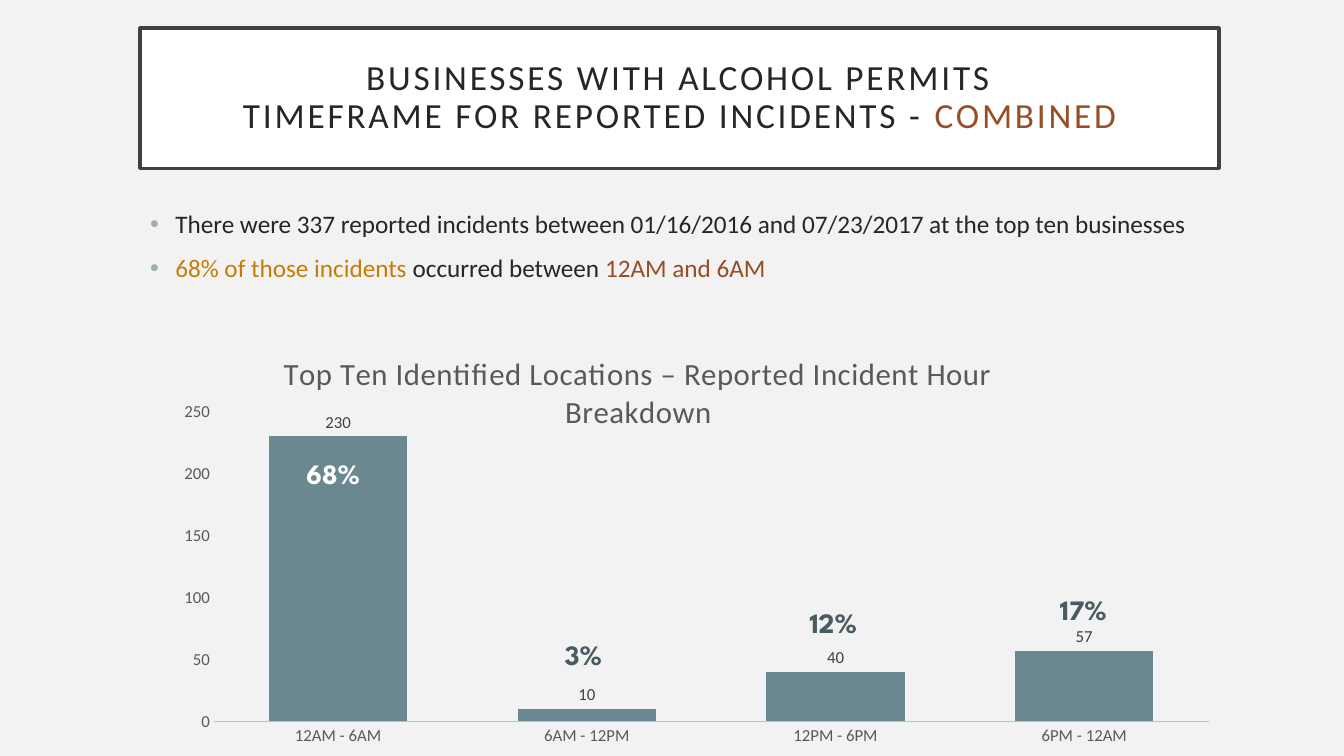
from dataclasses import dataclass

from lxml import etree
from pptx import Presentation
from pptx.chart.data import CategoryChartData
from pptx.dml.color import RGBColor
from pptx.enum.chart import XL_CHART_TYPE, XL_LABEL_POSITION, XL_TICK_MARK
from pptx.enum.shapes import MSO_SHAPE
from pptx.enum.text import MSO_ANCHOR, PP_ALIGN
from pptx.oxml import parse_xml
from pptx.oxml.ns import nsdecls, qn
from pptx.util import Inches, Pt

CENTER = PP_ALIGN.CENTER
MIDDLE = MSO_ANCHOR.MIDDLE
RECTANGLE = MSO_SHAPE.RECTANGLE
COLUMNS = XL_CHART_TYPE.COLUMN_CLUSTERED
OUTSIDE_END = XL_LABEL_POSITION.OUTSIDE_END
NO_TICK = XL_TICK_MARK.NONE

PAPER = RGBColor(0xF2, 0xF2, 0xF2)
WHITE = RGBColor(0xFF, 0xFF, 0xFF)
INK = RGBColor(0x26, 0x26, 0x26)
CHARCOAL = RGBColor(0x40, 0x40, 0x40)
GRAY = RGBColor(0x59, 0x59, 0x59)
AXIS_GRAY = RGBColor(0xBF, 0xBF, 0xBF)
RUST = RGBColor(0x97, 0x4D, 0x25)
AMBER = RGBColor(0xC6, 0x7D, 0x08)
TEAL = RGBColor(0x6B, 0x88, 0x91)
DARK_TEAL = RGBColor(0x47, 0x5B, 0x61)
BULLET = RGBColor(0x9B, 0xAF, 0xB5)

BODY_FONT = "Calibri"
SHARE_FONT = "League Spartan"


@dataclass
class Span:
    text: str
    color: RGBColor


@dataclass
class Period:
    hours: str
    incidents: int
    share: str
    share_top: float
    share_color: RGBColor


TITLE_LINES = [
    [Span("BUSINESSES WITH ALCOHOL PERMITS", INK)],
    [Span("TIMEFRAME FOR REPORTED INCIDENTS - ", INK), Span("COMBINED", RUST)],
]
FINDINGS = [
    [Span("There were 337 reported incidents between 01/16/2016 and 07/23/2017 "
          "at the top ten businesses", INK)],
    [Span("68% of those incidents ", AMBER), Span("occurred between ", INK),
     Span("12AM and 6AM", RUST)],
]
PERIODS = [
    Period("12AM - 6AM", 230, "68%", 4.43, WHITE),
    Period("6AM - 12PM", 10, "3%", 6.22, DARK_TEAL),
    Period("12PM - 6PM", 40, "12%", 5.91, DARK_TEAL),
    Period("6PM - 12AM", 57, "17%", 5.78, DARK_TEAL),
]
SHARE_LEFT = 2.55
SHARE_STEP = 2.48


def style_font(font, size: float, color: RGBColor, name: str = BODY_FONT,
               bold: bool = False) -> None:
    font.size = Pt(size)
    font.name = name
    font.bold = bold
    font.color.rgb = color


def add_span(para, span: Span, size: float, name: str = BODY_FONT,
             bold: bool = False, spacing: float = 0) -> None:
    run = para.add_run()
    run.text = span.text
    style_font(run.font, size, span.color, name, bold)
    if spacing:
        run.font._element.set("spc", str(int(spacing * 100)))


def add_bullet(para) -> None:
    properties = para._p.get_or_add_pPr()
    properties.set("marL", str(Inches(0.25)))
    properties.set("indent", str(-Inches(0.25)))
    color = etree.SubElement(properties, qn("a:buClr"))
    etree.SubElement(color, qn("a:srgbClr"), val=str(BULLET))
    etree.SubElement(properties, qn("a:buFont"), typeface="Arial")
    etree.SubElement(properties, qn("a:buChar"), char="•")


def add_title(page) -> None:
    box = page.shapes.add_shape(RECTANGLE, Inches(1.39), Inches(0.28),
                                Inches(10.7), Inches(1.39))
    box.shadow.inherit = False
    box.fill.solid()
    box.fill.fore_color.rgb = WHITE
    box.line.color.rgb = CHARCOAL
    box.line.width = Pt(2.5)
    frame = box.text_frame
    frame.word_wrap = True
    frame.vertical_anchor = MIDDLE
    frame.margin_left = frame.margin_right = Inches(0.2)
    frame.margin_top = frame.margin_bottom = Inches(0.2)
    para = frame.paragraphs[0]
    para.alignment = CENTER
    para.line_spacing = 0.9
    for index, line in enumerate(TITLE_LINES):
        if index:
            para.add_line_break()
        for span in line:
            add_span(para, span, 25.2, spacing=2)


def add_findings(page) -> None:
    box = page.shapes.add_textbox(Inches(1.39), Inches(2.02), Inches(10.82), Inches(3.67))
    frame = box.text_frame
    frame.word_wrap = True
    for index, finding in enumerate(FINDINGS):
        para = frame.add_paragraph() if index else frame.paragraphs[0]
        para.space_before = Pt(10)
        add_bullet(para)
        for span in finding:
            add_span(para, span, 18)


def make_layout(x: float, y: float, size: tuple[float, float] | None = None):
    target = '<c:layoutTarget val="inner"/>' if size else ""
    extent = f'<c:w val="{size[0]}"/><c:h val="{size[1]}"/>' if size else ""
    return parse_xml(
        f'<c:layout {nsdecls("c")}><c:manualLayout>{target}'
        f'<c:xMode val="edge"/><c:yMode val="edge"/>'
        f'<c:x val="{x}"/><c:y val="{y}"/>{extent}</c:manualLayout></c:layout>')


def place_part(part, layout) -> None:
    for previous in part.findall(qn("c:layout")):
        part.remove(previous)
    text = part.find(qn("c:tx"))
    if text is None:
        part.insert(0, layout)
    else:
        text.addnext(layout)


def add_incident_chart(page) -> None:
    data = CategoryChartData()
    data.categories = [period.hours for period in PERIODS]
    data.add_series("Series 1", [period.incidents for period in PERIODS])
    chart = page.shapes.add_chart(COLUMNS, Inches(1.59), Inches(3.23),
                                  Inches(10.61), Inches(4.27), data).chart
    chart.has_legend = False
    style_font(chart.font, 10, GRAY)
    chart.has_title = True
    add_span(chart.chart_title.text_frame.paragraphs[0],
             Span("Top Ten Identified Locations – Reported Incident Hour Breakdown", GRAY),
             22, spacing=0.5)
    chart.chart_title.include_in_layout = False
    place_part(chart.chart_title._element, make_layout(0.11, 0.05))
    place_part(chart._chartSpace.chart.plotArea, make_layout(0.05, 0.2, (0.93, 0.72)))

    hours, counts = chart.category_axis, chart.value_axis
    for axis in (hours, counts):
        axis.major_tick_mark = axis.minor_tick_mark = NO_TICK
        style_font(axis.tick_labels.font, 12, GRAY)
    hours.format.line.color.rgb = AXIS_GRAY
    hours.format.line.width = Pt(1.25)
    counts.format.line.fill.background()
    counts.minimum_scale, counts.maximum_scale, counts.major_unit = 0, 250, 50
    counts.major_gridlines.format.line.color.rgb = PAPER
    counts.major_gridlines.format.line.width = Pt(0.75)

    plot = chart.plots[0]
    plot.gap_width, plot.overlap = 80, 25
    plot.vary_by_categories = False
    series = plot.series[0]
    series.format.fill.solid()
    series.format.fill.fore_color.rgb = TEAL
    labels = series.data_labels
    labels.show_value = True
    labels.position = OUTSIDE_END
    style_font(labels.font, 12, CHARCOAL)


def add_share(page, period: Period, left: float) -> None:
    box = page.shapes.add_textbox(Inches(left), Inches(period.share_top),
                                  Inches(1.51), Inches(0.68))
    box.text_frame.word_wrap = True
    para = box.text_frame.paragraphs[0]
    para.alignment = CENTER
    para.line_spacing = 1.15
    add_span(para, Span(period.share, period.share_color), 20, SHARE_FONT, bold=True)


def main() -> None:
    deck = Presentation()
    deck.slide_width, deck.slide_height = Inches(13.33), Inches(7.5)
    page = deck.slides.add_slide(deck.slide_layouts[6])
    page.background.fill.solid()
    page.background.fill.fore_color.rgb = PAPER
    add_title(page)
    add_findings(page)
    add_incident_chart(page)
    for index, period in enumerate(PERIODS):
        add_share(page, period, SHARE_LEFT + index * SHARE_STEP)
    deck.save("out.pptx")


if __name__ == "__main__":
    main()
